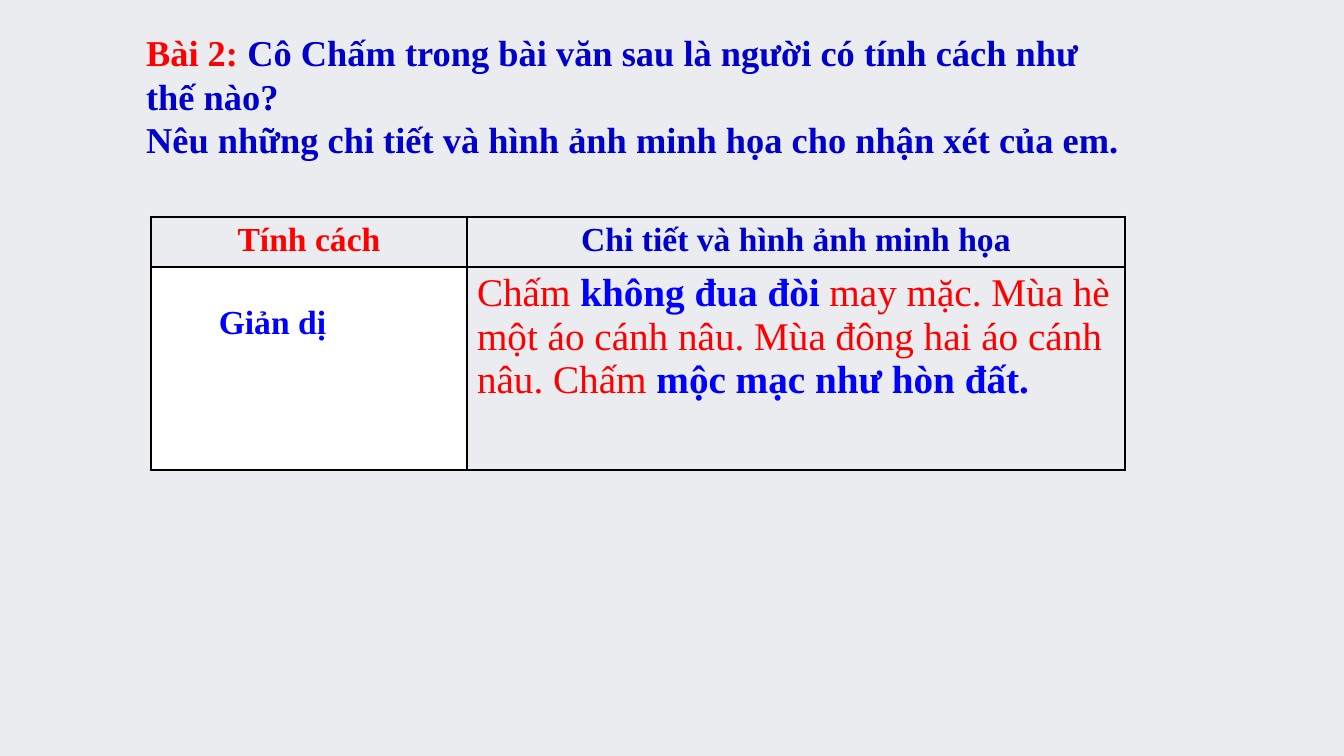
"""Build a Vietnamese lesson slide about the character of Chấm."""
from lxml.etree import SubElement
from pptx import Presentation
from pptx.dml.color import RGBColor
from pptx.enum.text import MSO_ANCHOR, MSO_AUTO_SIZE, PP_ALIGN
from pptx.oxml.ns import qn
from pptx.util import Emu, Pt

SCALE = 914400 / 100.8
FONT = "Times New Roman"
COLORS = {
    "page": "EBECF0",
    "red": "FF0000",
    "navy": "0000CC",
    "blue": "0000FF",
    "white": "FFFFFF",
    "black": "000000",
}
THICK, THIN = 2.25, 1


def px(length):
    """Turn pixels into EMU."""
    return Emu(round(length * SCALE))


def color(name):
    """Look up a named colour."""
    return RGBColor.from_string(COLORS[name])


def place(box, left, top, width, height):
    """Move and size a box in pixels."""
    box.left, box.top = px(left), px(top)
    box.width, box.height = px(width), px(height)


def write(frame, paragraphs, size, align=PP_ALIGN.LEFT):
    """Fill a text frame with paragraphs of (text, colour, bold) spans."""
    frame.word_wrap = True
    for index, spans in enumerate(paragraphs):
        para = frame.add_paragraph() if index else frame.paragraphs[0]
        para.alignment = align
        para.space_before = Pt(0)
        for text, name, bold in spans:
            span = para.add_run()
            span.text = text
            span.font.name = FONT
            span.font.size = Pt(size)
            span.font.bold = bold
            span.font.color.rgb = color(name)


def add_borders(cell, widths):
    """Draw the left, right, top and bottom borders of a cell."""
    properties = cell._tc.get_or_add_tcPr()
    for index, (side, width) in enumerate(zip("LRTB", widths)):
        line = properties.makeelement(qn(f"a:ln{side}"), {"w": str(Pt(width))})
        fill = SubElement(line, qn("a:solidFill"))
        SubElement(fill, qn("a:srgbClr"), val=COLORS["black"])
        properties.insert(index, line)


def add_title(page):
    """Put the exercise question in the title placeholder."""
    title = page.shapes.title
    place(title, 136, 25, 1004, 142)
    frame = title.text_frame
    frame.auto_size = MSO_AUTO_SIZE.NONE
    frame.vertical_anchor = MSO_ANCHOR.TOP
    write(frame, [
        [("Bài 2: ", "red", True),
         ("Cô Chấm trong bài văn sau là người có tính cách như thế nào?", "navy", True)],
        [("Nêu những chi tiết và hình ảnh minh họa cho nhận xét của em.", "navy", True)],
    ], 26)


def add_traits_table(page):
    """Add the table of character traits and details."""
    table = page.shapes.add_table(2, 2, px(151), px(217), px(974), px(253)).table
    for column, width in zip(table.columns, (316, 658)):
        column.width = px(width)
    for row, height in zip(table.rows, (50, 203)):
        row.height = px(height)
    for row in range(2):
        for column in range(2):
            cell = table.cell(row, column)
            cell.fill.background()
            add_borders(cell, (THIN if column else THICK, THICK if column else THIN,
                               THIN if row else THICK, THIN))
    trait = table.cell(1, 0)
    trait.fill.solid()
    trait.fill.fore_color.rgb = color("white")
    headings = (("Tính cách", "red"), ("Chi tiết và hình ảnh minh họa", "navy"))
    for column, (text, name) in enumerate(headings):
        write(table.cell(0, column).text_frame, [[(text, name, True)]], 24, PP_ALIGN.CENTER)
    write(table.cell(1, 1).text_frame, [[
        ("Chấm ", "red", False),
        ("không đua đòi ", "blue", True),
        ("may mặc. Mùa hè một áo cánh nâu. Mùa đông hai áo cánh nâu. Chấm ", "red", False),
        ("mộc mạc như hòn đất.", "blue", True),
    ]], 28)


def add_label(page, text, left, top, width, height):
    """Add a centred blue label."""
    box = page.shapes.add_textbox(px(left), px(top), px(width), px(height))
    write(box.text_frame, [[(text, "blue", True)]], 24, PP_ALIGN.CENTER)


def main():
    """Build and save the slide."""
    deck = Presentation()
    deck.slide_width, deck.slide_height = px(1344), px(756)
    page = deck.slides.add_slide(deck.slide_layouts[5])
    page.background.fill.solid()
    page.background.fill.fore_color.rgb = color("page")
    add_title(page)
    add_traits_table(page)
    add_label(page, "Giản dị", 201, 296, 143, 85)
    deck.save("out.pptx")


if __name__ == "__main__":
    main()
